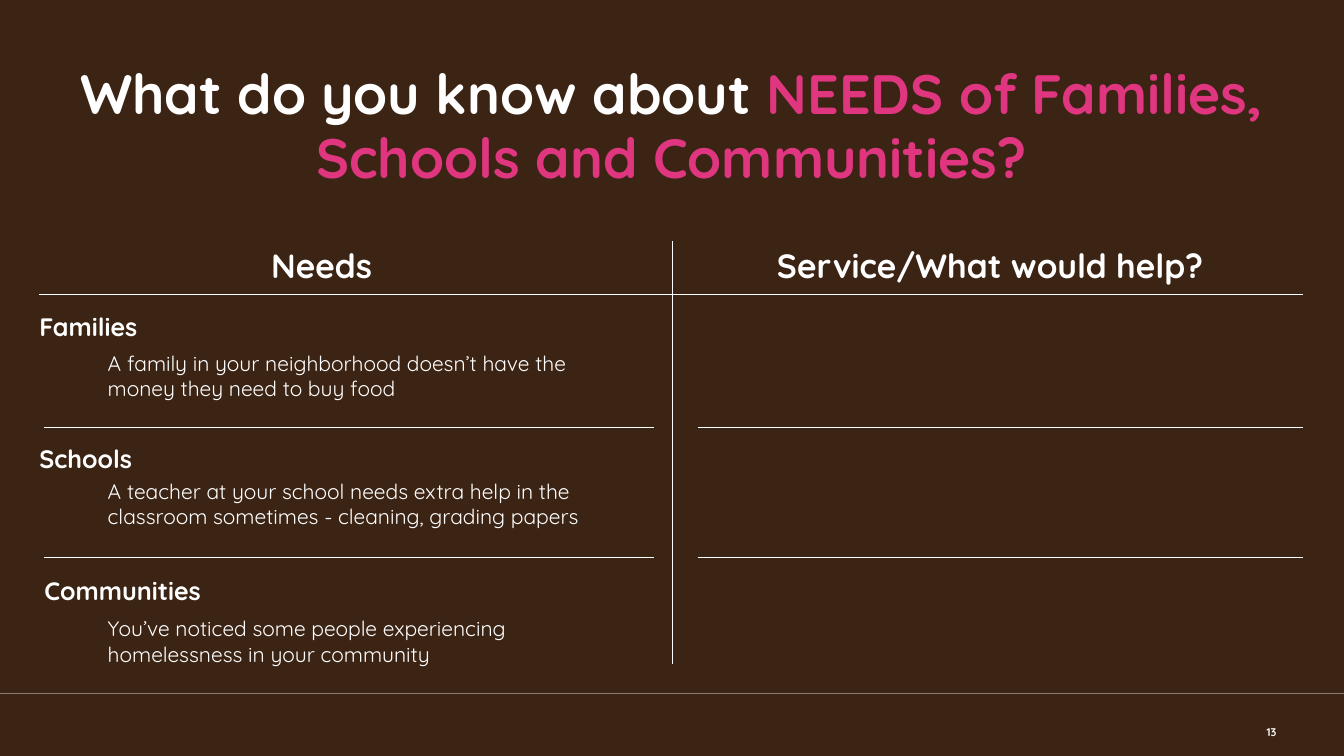
from lxml import etree
from pptx import Presentation
from pptx.dml.color import RGBColor
from pptx.enum.shapes import MSO_CONNECTOR
from pptx.enum.text import MSO_ANCHOR, MSO_AUTO_SIZE, PP_ALIGN
from pptx.oxml.ns import qn
from pptx.util import Inches, Pt

LEFT, CENTER, RIGHT = PP_ALIGN.LEFT, PP_ALIGN.CENTER, PP_ALIGN.RIGHT
TOP, MIDDLE = MSO_ANCHOR.TOP, MSO_ANCHOR.MIDDLE
STRAIGHT = MSO_CONNECTOR.STRAIGHT
FIT = MSO_AUTO_SIZE.NONE

FONT = "Quicksand"
COLORS = {"back": "3C2415", "text": "FFFFFF", "accent": "DF367F",
          "number": "F2F2F2", "footer": "8C7A6F"}

TITLE = [("What do you know about ", "text"),
         ("NEEDS of Families, Schools and Communities?", "accent")]
# text, left, width
HEADS = [("Needs", 2.22, 1.94), ("Service/What would help?", 7.22, 5.2)]
# heading, left, heading top, need, need top
NEEDS = [
    ("Families", 0.39, 3.06,
     "A family in your neighborhood doesn’t have the money they need to buy food",
     3.38),
    ("Schools", 0.39, 4.37,
     "A teacher at your school needs extra help in the classroom sometimes"
     " - cleaning, grading papers", 4.65),
    ("Communities", 0.44, 5.68,
     "You’ve noticed some people experiencing homelessness in your community",
     6.01),
]
PAGE = "13"

WIDTH, HEIGHT = 13.33, 7.5
HEAD_TOP, HEAD_H = 2.39, 0.55
MID, END = 6.67, 12.92
ROW_ENDS = (4.24, 5.53)
COLUMNS = ((0.44, 6.49), (6.92, END))


def color(name):
    return RGBColor.from_string(COLORS[name])


def rule(slide, x1, y1, x2, y2, tint="text"):
    """Draw a thin line without a shadow."""
    line = slide.shapes.add_connector(
        STRAIGHT, Inches(x1), Inches(y1), Inches(x2), Inches(y2))
    line.line.color.rgb = color(tint)
    line.line.width = Pt(0.75)
    etree.SubElement(line._element.spPr, qn("a:effectLst"))


def place(shape, left, top, width, height):
    shape.left, shape.top = Inches(left), Inches(top)
    shape.width, shape.height = Inches(width), Inches(height)


def write(shape, runs, size, bold=True, align=LEFT, anchor=TOP,
          inset=0, spacing=1.0):
    """Fill a shape with one paragraph of (text, colour) runs."""
    frame = shape.text_frame
    frame.word_wrap = True
    frame.auto_size = FIT
    frame.vertical_anchor = anchor
    frame.margin_left = frame.margin_right = Inches(inset)
    frame.margin_top = frame.margin_bottom = Inches(inset)
    para = frame.paragraphs[0]
    para.alignment = align
    para.line_spacing = spacing
    para.space_before = Pt(0)
    para.font.name, para.font.size, para.font.bold = FONT, Pt(size), bold
    for text, tint in runs:
        run = para.add_run()
        run.text = text
        run.font.color.rgb = color(tint)


def label(slide, box, text, size, tint="text", **style):
    shape = slide.shapes.add_textbox(*map(Inches, box))
    write(shape, [(text, tint)], size, **style)


def main():
    deck = Presentation()
    deck.slide_width, deck.slide_height = Inches(WIDTH), Inches(HEIGHT)
    slide = deck.slides.add_slide(deck.slide_layouts.get_by_name("Comparison"))
    slide.background.fill.solid()
    slide.background.fill.fore_color.rgb = color("back")

    title, head1, spare1, head2, spare2 = slide.placeholders
    for spare in (spare1, spare2):
        spare._element.getparent().remove(spare._element)

    place(title, 0.71, 0.65, 11.9, 1.23)
    write(title, TITLE, 39.6, align=CENTER, anchor=MIDDLE, spacing=0.95)
    for shape, (text, left, width) in zip((head1, head2), HEADS):
        place(shape, left, HEAD_TOP, width, HEAD_H)
        write(shape, [(text, "text")], 24, align=CENTER, spacing=1.1)

    rule(slide, 0, 6.88, WIDTH, 6.88, "footer")
    rule(slide, MID, HEAD_TOP, MID, 6.59)
    rule(slide, 0.39, 2.92, END, 2.92)
    for y in ROW_ENDS:
        for start, stop in COLUMNS:
            rule(slide, start, y, stop, y)

    for name, left, top, need, need_top in NEEDS:
        label(slide, (left, top, 3.34, HEAD_H), name, 18, spacing=1.1)
        label(slide, (0.97, need_top, 5.45, 0.8), need, 15,
              bold=False, inset=0.1)
    label(slide, (12.24, 7.06, 0.42, 0.4), PAGE, 8, "number",
          align=RIGHT, anchor=MIDDLE)

    deck.save("out.pptx")


if __name__ == "__main__":
    main()
